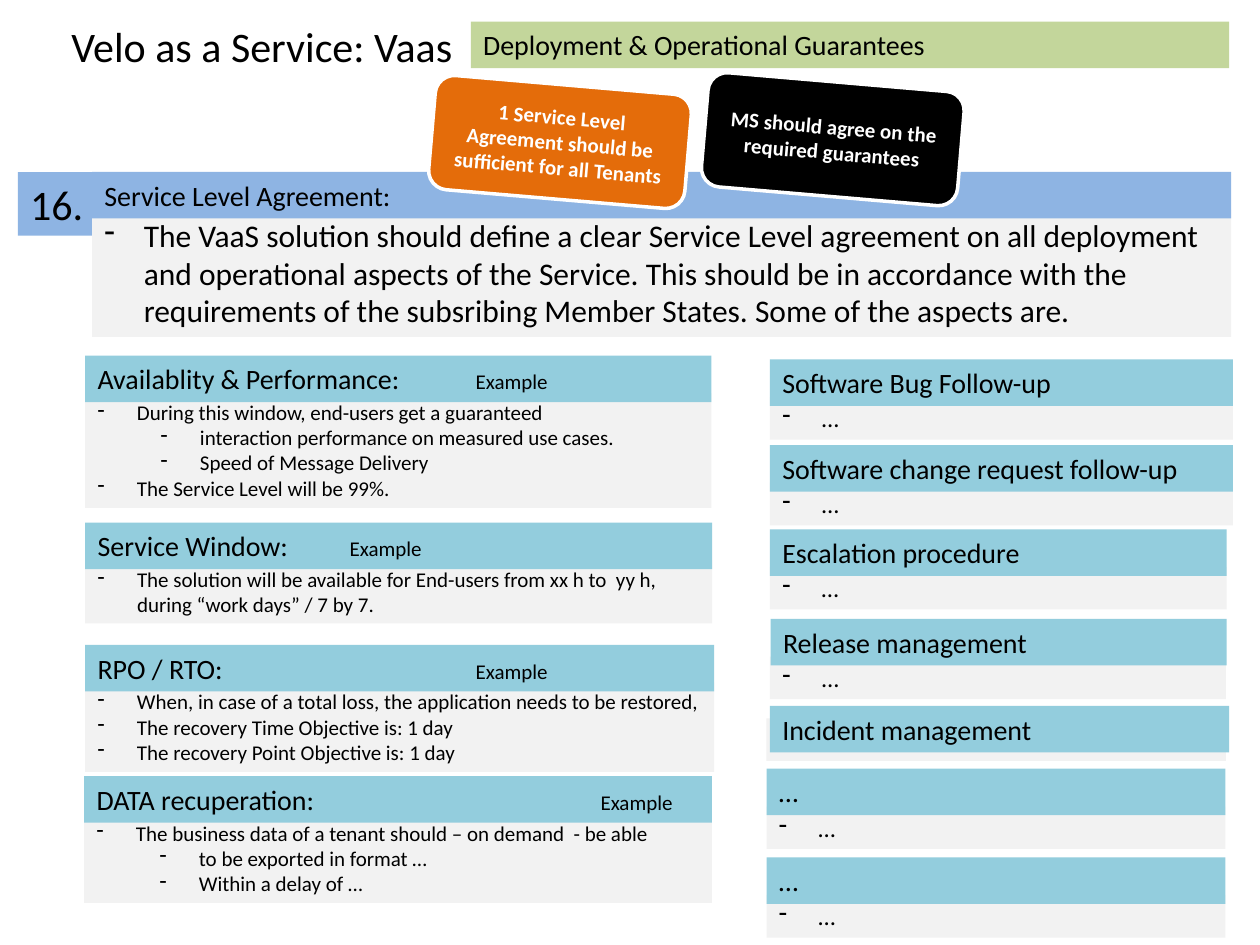
import pptx
import pptx.util
import pptx.dml.color
import pptx.enum.shapes
import pptx.enum.text
import pptx.oxml
import pptx.oxml.ns

Pt = pptx.util.Pt
RGBColor = pptx.dml.color.RGBColor
BLACK = RGBColor(0x00, 0x00, 0x00)
WHITE = RGBColor(0xFF, 0xFF, 0xFF)
GREEN = RGBColor(0xC3, 0xD6, 0x9B)
BLUE = RGBColor(0x8E, 0xB4, 0xE3)
TEAL = RGBColor(0x93, 0xCD, 0xDD)
GREY = RGBColor(0xF2, 0xF2, 0xF2)
ORANGE = RGBColor(0xE4, 0x6C, 0x0A)

FONT = "Calibri"
HEADER_HEIGHT = 26.6
BODY_DROP = 21.6  # the header covers the top edge of the body
TAB_STEP = 72

# Left cards: left, top, width, body height, title, (level, text) lines
LEFT_CARDS = [
    (48.7, 203.2, 357.8, 65.5, "Availablity & Performance: \t", [
        (0, "During this window, end-users get a guaranteed"),
        (1, "interaction performance on measured use cases."),
        (1, "Speed of Message Delivery"),
        (0, "The Service Level will be 99%.")]),
    (48.7, 298.7, 358.2, 36, "Service Window: \t", [
        (0, "The solution will be available for End-users from xx h to  yy h, "
            "during “work days” / 7 by 7.")]),
    (48.7, 368.6, 359.5, 50.9, "RPO / RTO:\t\t\t", [
        (0, "When, in case of a total loss, the application needs to be restored,"),
        (0, "The recovery Time Objective is: 1 day"),
        (0, "The recovery Point Objective is: 1 day")]),
    (48.1, 443.5, 358.8, 50.9, "DATA recuperation:\t\t\t", [
        (0, "The business data of a tenant should – on demand  - be able"),
        (1, "to be exported in format …"),
        (1, "Within a delay of …")]),
]

# Right cards: left, top, width, title, body shift (x, y)
RIGHT_CARDS = [
    (440, 205.4, 264.5, "Software Bug Follow-up", (0, 0)),
    (440, 254.4, 264.5, "Software change request follow-up", (0, 0)),
    (440, 302.5, 261, "Escalation procedure", (0, 0)),
    (440.4, 353.7, 260.6, "Release management", (-0.4, 0)),
    (440, 403.4, 262.5, "Incident management", (-2, -14.4)),
    (438, 439.3, 262.3, "…", (0, 0)),
    (438, 490, 262.3, "…", (0, 0)),
]


def format_run(span, size, color=BLACK, bold=False):
    span.font.name = FONT
    span.font.size = Pt(size)
    span.font.color.rgb = color
    span.font.bold = bold


def add_box(page, bounds, fill, kind=pptx.enum.shapes.MSO_SHAPE.RECTANGLE):
    box = page.shapes.add_shape(kind, *map(Pt, bounds))
    box.shadow.inherit = False
    box.fill.solid()
    box.fill.fore_color.rgb = fill
    box.line.fill.background()
    return box


def fit_text(box, wrap=True):
    frame = box.text_frame
    frame.word_wrap = wrap
    frame.auto_size = pptx.enum.text.MSO_AUTO_SIZE.SHAPE_TO_FIT_TEXT
    frame.vertical_anchor = pptx.enum.text.MSO_ANCHOR.TOP


def append_property(para, xml):
    properties = para._p.get_or_add_pPr()
    properties.append(pptx.oxml.parse_xml(xml % pptx.oxml.ns.nsdecls("a")))
    return properties


def add_tabs(para):
    stops = "".join("<a:tab pos='%d' algn='l'/>" % Pt(TAB_STEP * step)
                    for step in range(1, 5))
    append_property(para, "<a:tabLst %s>" + stops + "</a:tabLst>")


def add_dash(para, level):
    append_property(para, "<a:buFontTx %s/>")
    properties = append_property(para, "<a:buChar %s char='-'/>")
    properties.set("marL", str(Pt(22.5 + 36 * level)))
    properties.set("indent", str(Pt(-22.5)))


def add_label(page, bounds, fill, text, size, wrap=True, note=None):
    box = add_box(page, bounds, fill)
    fit_text(box, wrap)
    box.text_frame.text = text
    para = box.text_frame.paragraphs[0]
    para.alignment = pptx.enum.text.PP_ALIGN.LEFT
    format_run(para.runs[0], size)
    if note:
        add_tabs(para)
        span = para.add_run()
        span.text = note
        format_run(span, 12)


def add_list(page, bounds, lines, size):
    box = add_box(page, bounds, GREY)
    fit_text(box)
    frame = box.text_frame
    frame.text = "\n".join(text for level, text in lines)
    for para, (level, text) in zip(frame.paragraphs, lines):
        para.level = level
        para.alignment = pptx.enum.text.PP_ALIGN.LEFT
        add_dash(para, level)
        format_run(para.runs[0], size)


def add_badge(page, left, top, fill, text):
    box = add_box(page, (left, top, 146.9, 65.5), fill,
                  pptx.enum.shapes.MSO_SHAPE.ROUNDED_RECTANGLE)
    box.rotation = 4.9
    box.line.color.rgb = WHITE
    box.line.width = Pt(2)
    frame = box.text_frame
    frame.word_wrap = True
    frame.vertical_anchor = pptx.enum.text.MSO_ANCHOR.MIDDLE
    frame.text = text
    para = frame.paragraphs[0]
    para.alignment = pptx.enum.text.PP_ALIGN.CENTER
    format_run(para.runs[0], 12, WHITE, True)


def main():
    deck = pptx.Presentation()
    deck.slide_width, deck.slide_height = Pt(720), Pt(540)
    page = deck.slides.add_slide(deck.slide_layouts[6])

    # Title and topic bar
    title = page.shapes.add_textbox(Pt(33.8), Pt(7.9), Pt(234.7), Pt(36))
    fit_text(title, wrap=False)
    title.text_frame.text = "Velo as a Service: Vaas"
    format_run(title.text_frame.paragraphs[0].runs[0], 24)
    add_label(page, (269, 12.4, 433.4, HEADER_HEIGHT), GREEN,
              "Deployment & Operational Guarantees", 16)

    # Numbered requirement
    add_label(page, (10.2, 98.3, 45.4, 36.3), BLUE, "16.", 24, wrap=False)
    add_list(page, (52.6, 119.8, 651, 72.7), [
        (0, "The VaaS solution should define a clear Service Level agreement "
            "on all deployment and operational aspects of the Service. This "
            "should be in accordance with the requirements of the subsribing "
            "Member States. Some of the aspects are.")], 18)
    add_label(page, (52.6, 98.3, 651, HEADER_HEIGHT), BLUE,
              "Service Level Agreement:", 16)

    # Cards with examples
    for left, top, width, height, heading, lines in LEFT_CARDS:
        add_list(page, (left, top + BODY_DROP, width, height), lines, 12)
        add_label(page, (left, top, width, HEADER_HEIGHT), TEAL, heading, 16,
                  note="Example")

    # Cards still to be filled in
    for left, top, width, heading, (shift_x, shift_y) in RIGHT_CARDS:
        body = (left + shift_x, top + BODY_DROP + shift_y, width, 24.2)
        add_list(page, body, [(0, "…")], 14)
        add_label(page, (left, top, width, HEADER_HEIGHT), TEAL, heading, 16)

    # Tilted badges
    add_badge(page, 246.6, 48.4, ORANGE,
              "1 Service Level Agreement should be sufficient for all Tenants")
    add_badge(page, 402.5, 46.8, BLACK,
              "MS should agree on the required guarantees")

    deck.save("out.pptx")


if __name__ == "__main__":
    main()
